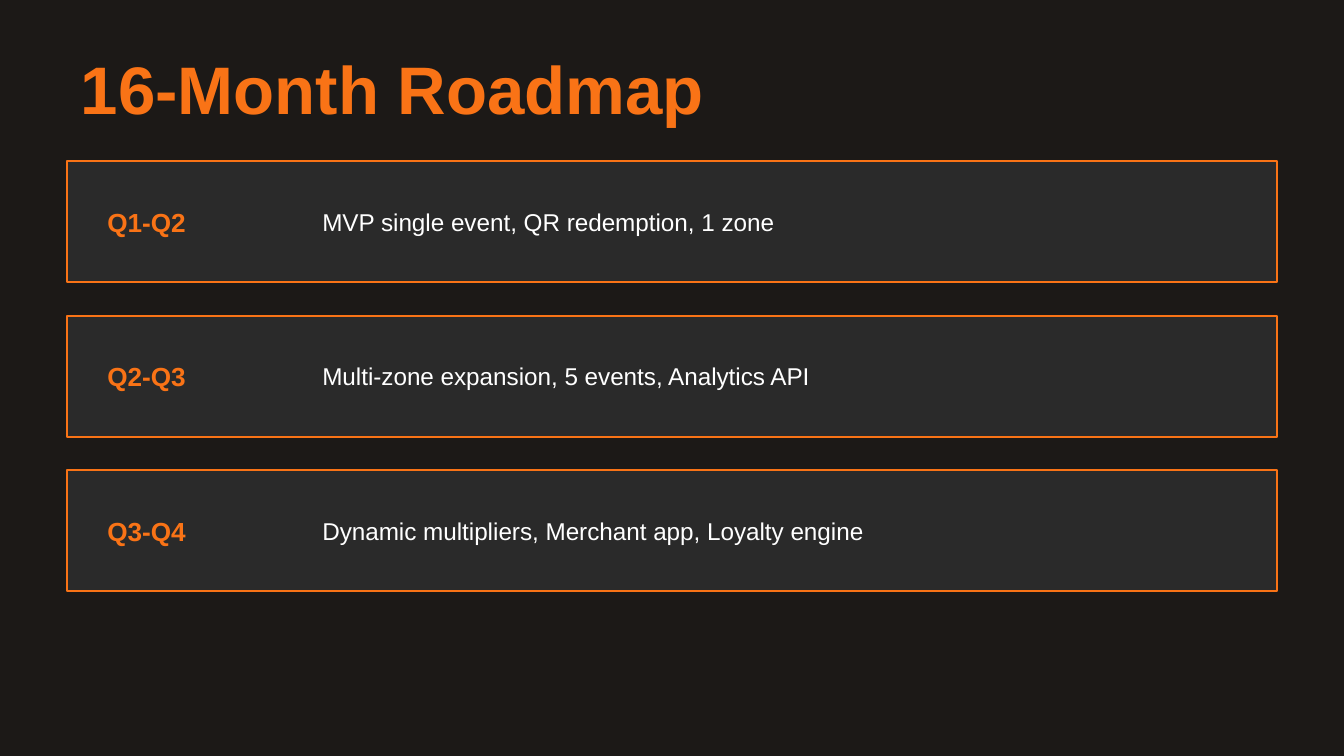
from pptx import Presentation
from pptx.dml.color import RGBColor
from pptx.enum.shapes import MSO_SHAPE
from pptx.enum.text import MSO_ANCHOR, MSO_AUTO_SIZE, PP_ALIGN
from pptx.util import Pt

ORANGE = "F97316"
PHASES = [
    ("Q1-Q2", "MVP single event, QR redemption, 1 zone"),
    ("Q2-Q3", "Multi-zone expansion, 5 events, Analytics API"),
    ("Q3-Q4", "Dynamic multipliers, Merchant app, Loyalty engine"),
]


def color(hex_code):
    return RGBColor.from_string(hex_code)


def write(box, text, size, hex_code, bold=False):
    frame = box.text_frame
    frame.word_wrap = True
    frame.auto_size = MSO_AUTO_SIZE.NONE
    frame.vertical_anchor = MSO_ANCHOR.MIDDLE
    para = frame.paragraphs[0]
    para.text = text
    para.alignment = PP_ALIGN.LEFT
    para.font.name = "Arial"
    para.font.size = Pt(size)
    para.font.bold = bold
    para.font.color.rgb = color(hex_code)


deck = Presentation()
deck.slide_width, deck.slide_height = Pt(720), Pt(405)
page = deck.slides.add_slide(deck.slide_layouts[5])
page.background.fill.solid()
page.background.fill.fore_color.rgb = color("1C1917")

# Title
title = page.shapes.title
title.left, title.top, title.width, title.height = Pt(36), Pt(28.8), Pt(648), Pt(36)
write(title, "16-Month Roadmap", 36, ORANGE, bold=True)

# One card per phase: quarters on the left, deliverables on the right
for index, (quarters, deliverables) in enumerate(PHASES):
    top = 86.4 + index * 82.8
    card = page.shapes.add_shape(
        MSO_SHAPE.RECTANGLE, Pt(36), Pt(top), Pt(648), Pt(64.8))
    card.shadow.inherit = False
    card.fill.solid()
    card.fill.fore_color.rgb = color("2A2A2A")
    card.line.color.rgb = color(ORANGE)
    card.line.width = Pt(1)

    text_top = Pt(top + 10.8)
    label = page.shapes.add_textbox(Pt(50.4), text_top, Pt(108), Pt(43.2))
    write(label, quarters, 14, ORANGE, bold=True)
    detail = page.shapes.add_textbox(Pt(165.6), text_top, Pt(504), Pt(43.2))
    write(detail, deliverables, 13, "FFFFFF")

deck.save("out.pptx")
